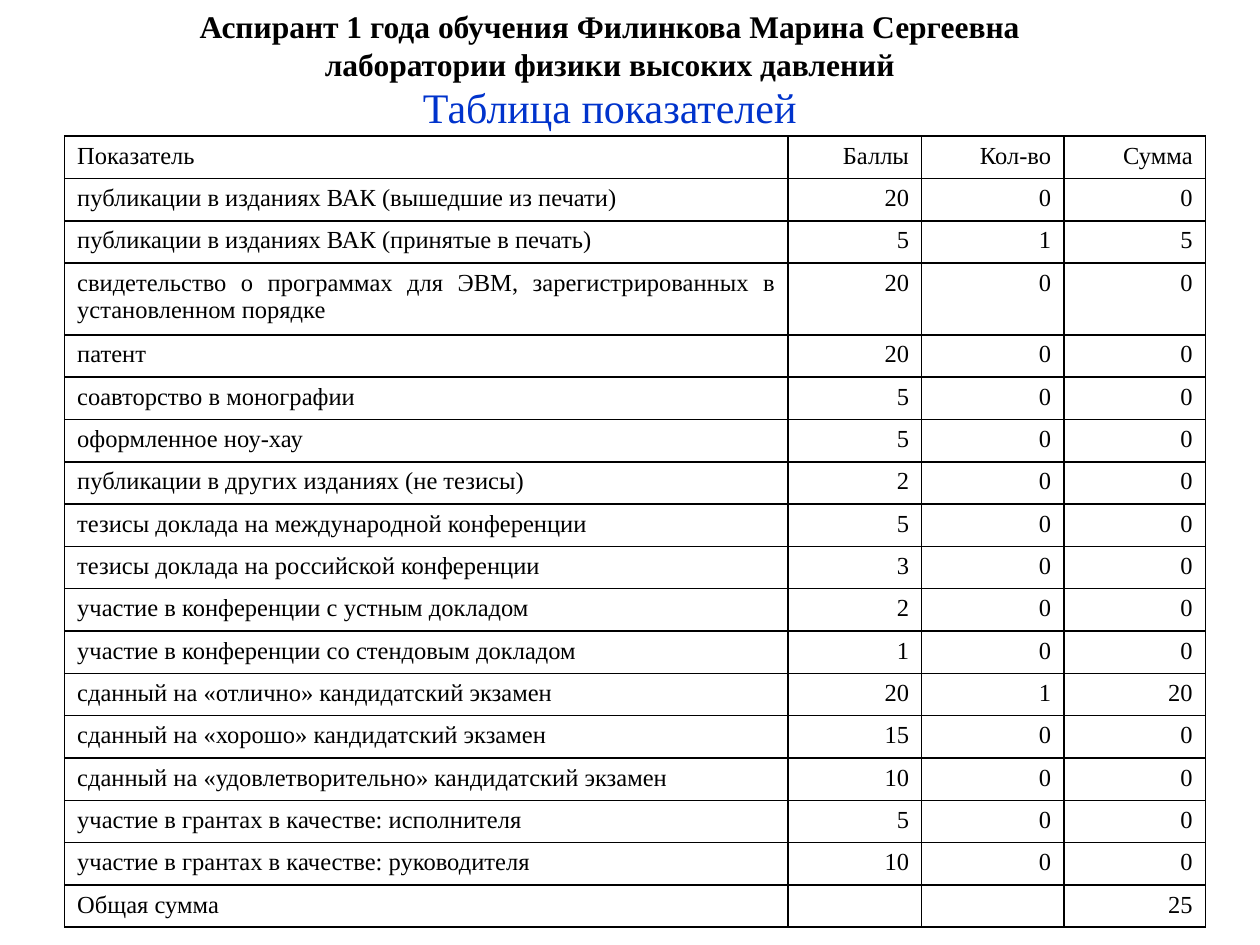
from lxml.etree import SubElement
from pptx import Presentation
from pptx.dml.color import RGBColor
from pptx.enum.text import MSO_ANCHOR as Anchor, PP_ALIGN as Align
from pptx.oxml import parse_xml
from pptx.oxml.ns import nsdecls, qn
from pptx.util import Pt

FONT = "Times New Roman"
BLACK, BLUE = "000000", "0033CC"
CELL_SIZE = 14

COLUMN_WIDTHS = [413.5, 76.3, 81.2, 80.9]
ROW_HEIGHT, TALL_ROW_HEIGHT = 24.2, 41
TALL_ROW = 3

HEADER = ["Показатель", "Баллы", "Кол-во", "Сумма"]
INDICATORS = [  # name, points, count
    ("публикации в изданиях ВАК (вышедшие из печати)", 20, 0),
    ("публикации в изданиях ВАК (принятые в печать)", 5, 1),
    ("свидетельство о программах для ЭВМ, зарегистрированных в установленном порядке", 20, 0),
    ("патент", 20, 0),
    ("соавторство в монографии", 5, 0),
    ("оформленное ноу-хау", 5, 0),
    ("публикации в других изданиях (не тезисы)", 2, 0),
    ("тезисы доклада на международной конференции", 5, 0),
    ("тезисы доклада на российской конференции", 3, 0),
    ("участие в конференции с устным докладом", 2, 0),
    ("участие в конференции со стендовым докладом", 1, 0),
    ("сданный на «отлично» кандидатский экзамен", 20, 1),
    ("сданный на «хорошо» кандидатский экзамен", 15, 0),
    ("сданный на «удовлетворительно» кандидатский экзамен", 10, 0),
    ("участие в грантах в качестве: исполнителя", 5, 0),
    ("участие в грантах в качестве: руководителя", 10, 0),
]


def rgb(color):
    return RGBColor.from_string(color)


def add_span(para, text, size, color=BLACK, bold=False):
    span = para.add_run()
    span.text = text
    span.font.name = FONT
    span.font.size = Pt(size)
    span.font.bold = bold
    span.font.color.rgb = rgb(color)


def add_heading(page, left, top, width, height, lines, size, color,
                bold=False, anchor=Anchor.TOP, space_before=0):
    """Add a centred paragraph whose lines are parted by line breaks."""
    box = page.shapes.add_textbox(Pt(left), Pt(top), Pt(width), Pt(height))
    frame = box.text_frame
    frame.word_wrap = True
    frame.vertical_anchor = anchor
    para = frame.paragraphs[0]
    para.alignment = Align.CENTER
    para.space_before = Pt(space_before)
    for index, line in enumerate(lines):
        if index:
            para.add_line_break()
        add_span(para, line, size, color, bold)


def set_borders(cell, color, width):
    properties = cell._tc.get_or_add_tcPr()
    for index, side in enumerate(("lnL", "lnR", "lnT", "lnB")):
        properties.insert(index, parse_xml(
            f'<a:{side} {nsdecls("a")} w="{Pt(width)}"><a:solidFill>'
            f'<a:srgbClr val="{color}"/></a:solidFill></a:{side}>'))


def fill_cell(cell, text, alignment):
    cell.fill.background()
    set_borders(cell, BLACK, 1)
    cell.margin_left = cell.margin_right = Pt(7.2)
    cell.margin_top = cell.margin_bottom = Pt(3.6)
    para = cell.text_frame.paragraphs[0]
    para.alignment = alignment
    if text:
        add_span(para, text, CELL_SIZE)
    else:  # keeps an empty cell from stretching its row
        SubElement(para._p, qn("a:endParaRPr"), sz=str(CELL_SIZE * 100))


def indicator_rows():
    scored = [(name, points, count, points * count) for name, points, count in INDICATORS]
    total = sum(row[-1] for row in scored)
    return [HEADER, *scored, ("Общая сумма", "", "", total)]


def add_indicator_table(page, left, top):
    rows = indicator_rows()
    heights = [TALL_ROW_HEIGHT if index == TALL_ROW else ROW_HEIGHT
               for index in range(len(rows))]
    table = page.shapes.add_table(
        len(rows), len(COLUMN_WIDTHS), Pt(left), Pt(top),
        Pt(sum(COLUMN_WIDTHS)), Pt(sum(heights))).table
    table.first_row = table.horz_banding = False
    for column, width in zip(table.columns, COLUMN_WIDTHS):
        column.width = Pt(width)
    for row, height, values in zip(table.rows, heights, rows):
        row.height = Pt(height)
        for index, (cell, value) in enumerate(zip(row.cells, values)):
            fill_cell(cell, str(value), Align.RIGHT if index else Align.JUSTIFY)


def main():
    deck = Presentation()
    deck.slide_width, deck.slide_height = Pt(720), Pt(540)
    page = deck.slides.add_slide(deck.slide_layouts[6])
    page.background.fill.solid()
    page.background.fill.fore_color.rgb = rgb("FFFFFF")
    add_heading(page, 42.5, 0, 612, 51,
                ["Аспирант 1 года обучения Филинкова Марина Сергеевна",
                 "лаборатории физики высоких давлений"],
                18, BLACK, bold=True, anchor=Anchor.MIDDLE)
    add_heading(page, 96.5, 43.2, 504, 34, ["Таблица показателей"],
                24, BLUE, space_before=4.8)
    add_indicator_table(page, 36.9, 77.8)
    deck.save("out.pptx")


if __name__ == "__main__":
    main()
